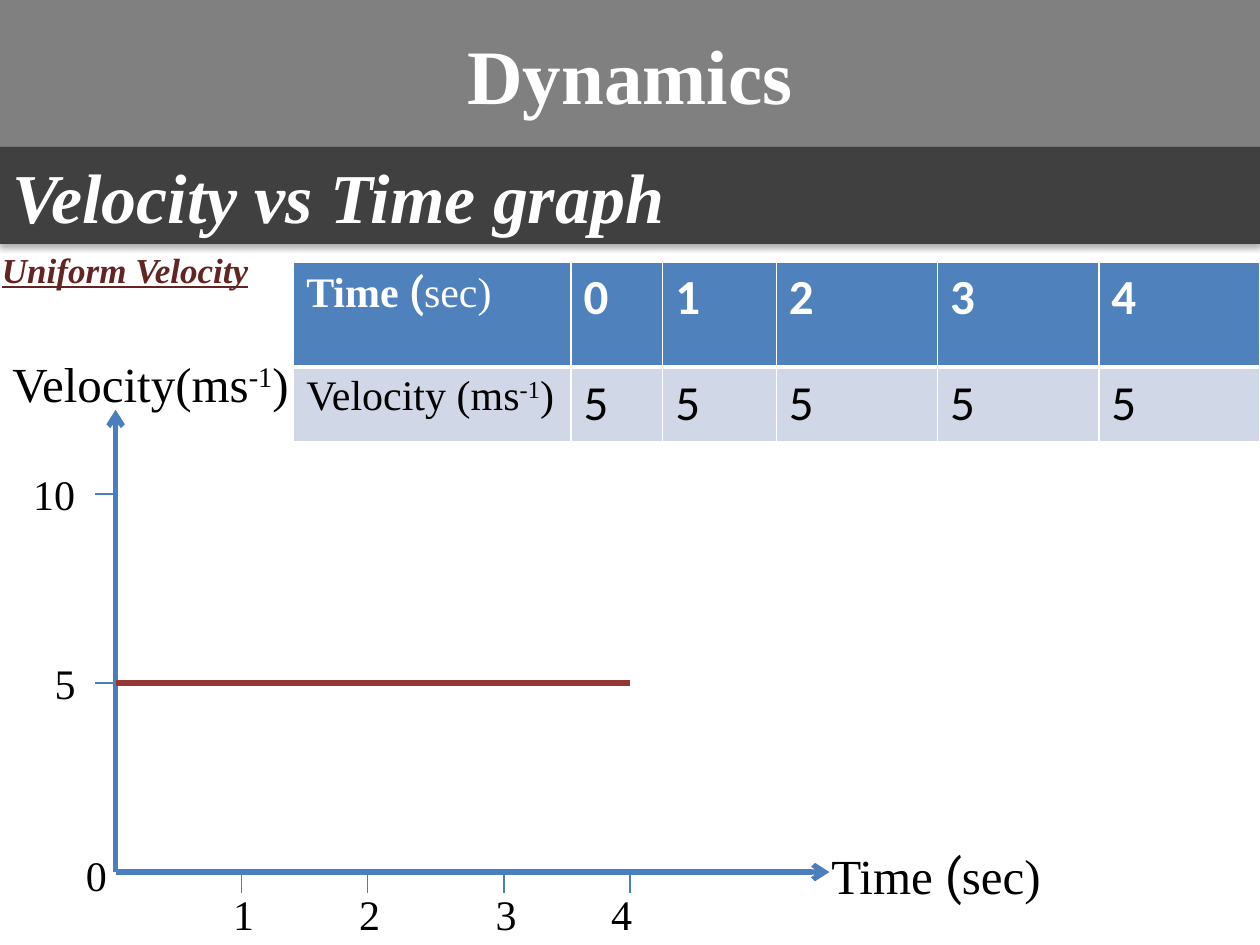
from lxml import etree
from pptx import Presentation
from pptx import util as u
from pptx.dml import color
from pptx.enum import shapes, text
from pptx.oxml import ns

SERIF, SANS, BRACKET = "Times New Roman", "Calibri", "Roboto"
WHITE, BLACK, AXIS, MAROON = "FFFFFF", "000000", "4B7EBC", "953735"
TABLE_HEAD, TABLE_BODY = "4F81BD", "D0D8E8"


def rgb(value):
    return color.RGBColor.from_string(value)


def add_xml(parent, tag, **attributes):
    element = etree.SubElement(parent, ns.qn(tag))
    for name, value in attributes.items():
        element.set(name, str(value))
    return element


class SlideBuilder:
    def __init__(self, presentation):
        self.slide = presentation.slides.add_slide(presentation.slide_layouts[5])

    def add_runs(self, frame, parts, size, colour=BLACK, **style):
        """Fill a text frame with (text, overrides) parts or one plain string."""
        if isinstance(parts, str):
            parts = [(parts, {})]
        paragraph = frame.paragraphs[0]
        for content, overrides in parts:
            run = paragraph.add_run()
            run.text = content
            look = {"name": SERIF, "bold": False, **style, **overrides}
            if look.pop("superscript", False):
                run._r.get_or_add_rPr().set("baseline", "30000")
            run.font.size = u.Pt(size)
            run.font.color.rgb = rgb(colour)
            for name, value in look.items():
                setattr(run.font, name, value)
        return paragraph

    def place(self, shape, left, top, width, height):
        shape.left, shape.top = u.Cm(left), u.Cm(top)
        shape.width, shape.height = u.Cm(width), u.Cm(height)

    def add_shadow(self, shape):
        effects = add_xml(shape._element.spPr, "a:effectLst")
        shadow = add_xml(effects, "a:outerShdw", blurRad=u.Pt(3.5), dist=u.Pt(2.2),
                         dir=5400000, rotWithShape=0)
        black = add_xml(shadow, "a:srgbClr", val=BLACK)
        add_xml(black, "a:alpha", val=32000)

    def paint(self, shape, fill):
        shape.fill.solid()
        shape.fill.fore_color.rgb = rgb(fill)
        shape.line.fill.background()
        self.add_shadow(shape)
        shape.text_frame.vertical_anchor = text.MSO_ANCHOR.MIDDLE

    def title(self, content, box, fill):
        title = self.slide.shapes.title
        self.place(title, *box)
        self.paint(title, fill)
        title.text_frame.auto_size = text.MSO_AUTO_SIZE.NONE
        paragraph = self.add_runs(title.text_frame, content, 44, WHITE, bold=True)
        paragraph.alignment = text.PP_ALIGN.CENTER

    def band(self, content, box, fill):
        band = self.slide.shapes.add_shape(
            shapes.MSO_SHAPE.RECTANGLE, *(u.Cm(length) for length in box))
        self.paint(band, fill)
        band.text_frame.word_wrap = True
        paragraph = self.add_runs(band.text_frame, content, 40, WHITE, bold=True, italic=True)
        paragraph.alignment = text.PP_ALIGN.LEFT

    def label(self, parts, box, size=24, colour=BLACK, **style):
        label = self.slide.shapes.add_textbox(*(u.Cm(length) for length in box))
        label.text_frame.word_wrap = True
        self.add_runs(label.text_frame, parts, size, colour, **style)

    def line(self, start, end, width=0.75, colour=AXIS, arrow=False):
        line = self.slide.shapes.add_connector(
            shapes.MSO_CONNECTOR.STRAIGHT, *(u.Cm(length) for length in (*start, *end)))
        line.line.width = u.Pt(width)
        line.line.color.rgb = rgb(colour)
        if arrow:
            add_xml(line.line._get_or_add_ln(), "a:tailEnd", type="arrow")
        add_xml(line._element.spPr, "a:effectLst")

    def border(self, cell, top, bottom):
        """Draw white cell edges, with the given top and bottom widths."""
        properties = cell._tc.get_or_add_tcPr()
        edges = {"a:lnL": 1, "a:lnR": 1, "a:lnT": top, "a:lnB": bottom}
        for index, (tag, width) in enumerate(edges.items()):
            edge = add_xml(properties, tag, w=u.Pt(width))
            add_xml(add_xml(edge, "a:solidFill"), "a:srgbClr", val=WHITE)
            properties.insert(index, edge)

    def table(self, rows, left, top, widths, heights):
        frame = self.slide.shapes.add_table(
            len(rows), len(widths), u.Cm(left), u.Cm(top),
            u.Cm(sum(widths)), u.Cm(sum(heights)))
        table = frame.table
        table.horz_banding = False
        for column, width in zip(table.columns, widths):
            column.width = u.Cm(width)
        for r, row in enumerate(rows):
            table.rows[r].height = u.Cm(heights[r])
            is_head = r == 0
            ink = WHITE if is_head else BLACK
            for c, content in enumerate(row):
                cell = table.cell(r, c)
                cell.fill.solid()
                cell.fill.fore_color.rgb = rgb(TABLE_HEAD if is_head else TABLE_BODY)
                self.border(cell, *((1, 3) if is_head else (3, 1)))
                size, font = (24, SERIF) if c == 0 else (28, SANS)
                self.add_runs(cell.text_frame, content, size, ink, name=font, bold=is_head)


def unit_of_velocity(prefix):
    return [(prefix, {}), ("-1", {"superscript": True}), (")", {})]


def draw_graph(builder):
    origin_x, origin_y = 2.33, 17.58
    tick, y_step = 0.42, 3.81
    builder.line((origin_x, origin_y), (origin_x, 8.26), 3, arrow=True)
    builder.line((origin_x, origin_y), (16.72, origin_y), 3, arrow=True)
    builder.label([("Time ", {}), ("(", {"name": BRACKET}), ("sec)", {})],
                  (16.51, 16.93, 5.5, 1.45), 28)
    builder.label(unit_of_velocity("Velocity(ms"), (0, 7, 6.99, 1.45), 28)
    builder.label("0", (1.48, 17, 1.07, 1.28))

    x_ticks = {"1": (4.87, 4.45), "2": (7.41, 6.99), "3": (10.16, 9.74), "4": (12.7, 12.07)}
    for value, (x, label_left) in x_ticks.items():
        builder.line((x, origin_y), (x, origin_y + tick))
        builder.label(value, (label_left, 17.78, 1.07, 1.28))

    for value, steps, label_left in (("5", 1, 0.85), ("10", 2, 0.42)):
        y = origin_y - steps * y_step
        builder.line((origin_x, y), (origin_x - tick, y))
        builder.label(value, (label_left, y - 0.64, 1.9 - label_left, 1.28))

    velocity_y = origin_y - y_step
    builder.line((origin_x, velocity_y), (12.7, velocity_y), 3, MAROON)


def main():
    presentation = Presentation()
    presentation.slide_width, presentation.slide_height = u.Cm(25.4), u.Cm(19.05)
    builder = SlideBuilder(presentation)
    builder.title("Dynamics", (0, 0, 25.4, 2.96), "808080")
    builder.band("Velocity vs Time graph", (0, 2.96, 25.4, 1.96), "404040")
    builder.label("Uniform Velocity", (-0.21, 4.88, 5.5, 1.11), 20, "632523",
                  bold=True, italic=True, underline=True)
    time_heading = [("Time ", {}), ("(", {"name": BRACKET}), ("sec)", {"bold": False})]
    builder.table([[time_heading, *"01234"],
                   [unit_of_velocity("Velocity (ms"), *"55555"]],
                  5.92, 5.28, [5.59, 1.85, 2.29, 3.25, 3.25, 3.25], [2.12, 1.5])
    draw_graph(builder)
    presentation.save("out.pptx")


if __name__ == "__main__":
    main()
